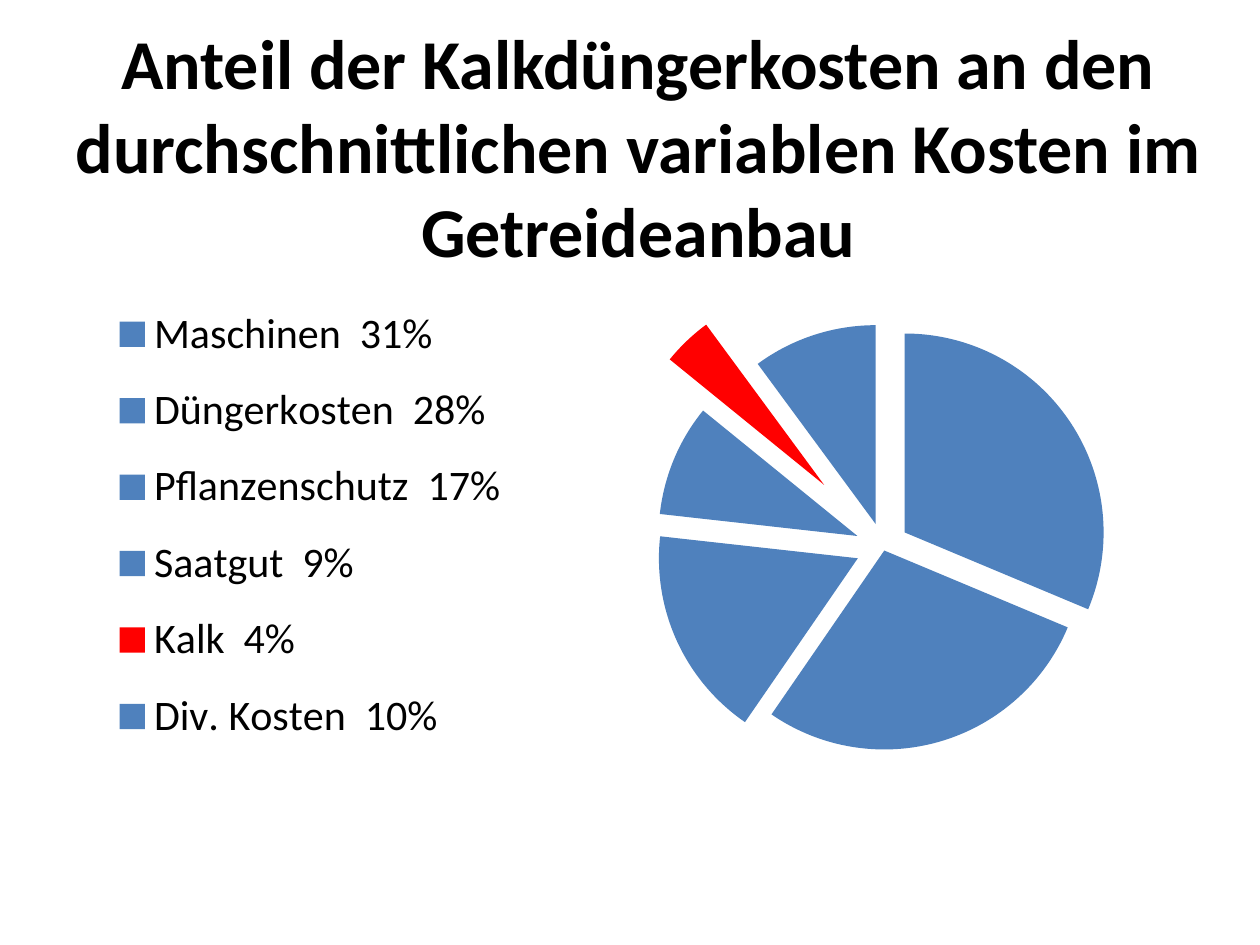
from lxml.etree import SubElement
from pptx import Presentation
from pptx.chart.data import CategoryChartData
from pptx.dml.color import RGBColor
from pptx.enum.chart import XL_CHART_TYPE as ChartType, XL_LEGEND_POSITION as LegendPosition
from pptx.enum.text import MSO_ANCHOR as Anchor, MSO_AUTO_SIZE as AutoSize, PP_ALIGN as Align
from pptx.oxml.ns import qn
from pptx.util import Inches, Pt

BLACK = RGBColor(0x00, 0x00, 0x00)
BLUE = RGBColor(0x4F, 0x81, 0xBD)
RED = RGBColor(0xFF, 0x00, 0x00)

COSTS = [
    ("Maschinen", 31, BLUE, 13),
    ("Düngerkosten", 28, BLUE, 2),
    ("Pflanzenschutz", 17, BLUE, 14),
    ("Saatgut", 9, BLUE, 14),
    ("Kalk", 4, RED, 43),
    ("Div. Kosten", 10, BLUE, 12),
]
SERIES_EXPLOSION = 52


class SlideBuilder:
    """Hold the style and the current slide, and add its elements."""

    def __init__(self, deck, font_name):
        self.font_name = font_name
        self.page = deck.slides.add_slide(deck.slide_layouts[5])

    def style(self, font, size, bold=False):
        font.name = self.font_name
        font.size = Pt(size)
        font.bold = bold
        font.color.rgb = BLACK

    def title(self, text, left, top, width, height):
        box = self.page.shapes.title
        box.left, box.top = Inches(left), Inches(top)
        box.width, box.height = Inches(width), Inches(height)
        frame = box.text_frame
        frame.text = text
        frame.word_wrap = True
        frame.auto_size = AutoSize.NONE
        frame.vertical_anchor = Anchor.MIDDLE
        para = frame.paragraphs[0]
        para.alignment = Align.CENTER
        self.style(para.font, 40, bold=True)

    def layout(self, parent, index, x, y, w, h, inner=False):
        for old in parent.findall(qn("c:layout")):
            parent.remove(old)
        layout = SubElement(parent, qn("c:layout"))
        parent.insert(index, layout)
        manual = SubElement(layout, qn("c:manualLayout"))
        settings = [("layoutTarget", "inner")] if inner else []
        settings += [("xMode", "edge"), ("yMode", "edge"), ("x", x), ("y", y), ("w", w), ("h", h)]
        for name, value in settings:
            SubElement(manual, qn(f"c:{name}")).set("val", str(value))

    def explode(self, parent, follower, percent):
        explosion = SubElement(parent, qn("c:explosion"))
        explosion.set("val", str(percent))
        parent.find(qn(follower)).addprevious(explosion)

    def pie(self, costs, left, top, width, height):
        data = CategoryChartData()
        data.categories = [f"{name}  {share}%" for name, share, _, _ in costs]
        data.add_series("Series 1", [share for _, share, _, _ in costs])
        chart = self.page.shapes.add_chart(
            ChartType.PIE, Inches(left), Inches(top), Inches(width), Inches(height), data
        ).chart
        chart.has_title = False
        self.style(chart.font, 18)
        plot = chart.plots[0]
        plot.vary_by_categories = True
        series = plot.series[0]
        for index, (_, _, color, _) in enumerate(costs):
            fill = series.points[index].format.fill
            fill.solid()
            fill.fore_color.rgb = color
        element = series._element
        for slice_element, cost in zip(element.findall(qn("c:dPt")), costs):
            self.explode(slice_element, "c:spPr", cost[3])
        self.explode(element, "c:dPt", SERIES_EXPLOSION)
        chart.has_legend = True
        legend = chart.legend
        legend.position = LegendPosition.RIGHT
        legend.include_in_layout = False
        self.style(legend.font, 24)
        self.layout(legend._element, 1, 0.07, 0.31 / height, 0.37, 3.84 / height)
        plot_area = chart._chartSpace.chart.plotArea
        self.layout(plot_area, 0, 0.4, 0, 5.72 / width, 1, inner=True)


def main():
    deck = Presentation()
    deck.slide_width, deck.slide_height = Inches(10), Inches(7.5)
    builder = SlideBuilder(deck, "Calibri")
    builder.title(
        "Anteil der Kalkdüngerkosten an den durchschnittlichen variablen Kosten im Getreideanbau",
        0.12, 0.13, 9.89, 2.05,
    )
    builder.pie(COSTS, -0.51, 1.94, 11.65, 4.8)
    deck.save("out.pptx")


if __name__ == "__main__":
    main()
